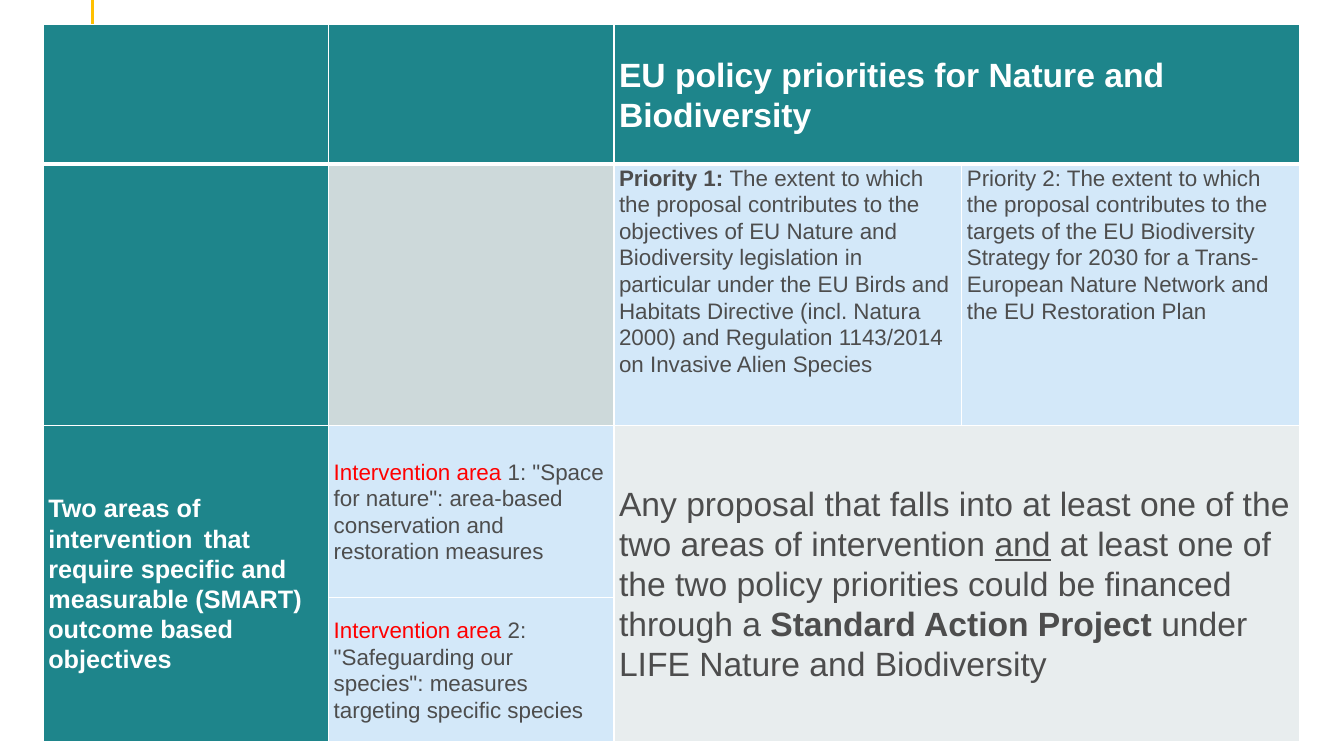
import pptx
import pptx.util
import pptx.dml.color
import pptx.enum.shapes
import pptx.enum.text
import pptx.oxml.ns
from lxml import etree
from pptx.util import Inches

TEAL, GREY, BLUE, PALE = "1E858B", "CDD9DA", "D3E8F9", "E8EDEE"
WHITE, TEXT, RED, GOLD = "FFFFFF", "4D4D4D", "FF0000", "FFC000"

COLUMN_WIDTHS = [2.83, 2.83, 3.45, 3.35]
ROW_HEIGHTS = [1.39, 2.59, 1.71, 1.43]
TABLE_LEFT, TABLE_TOP = 0.43, 0.24
ACCENT_X, ACCENT_BOTTOM = 0.92, 1.4
MERGES = [((0, 2), (0, 3)), ((2, 0), (3, 0)), ((2, 2), (3, 3))]

FILLS = [
    [TEAL, TEAL, TEAL, TEAL],
    [TEAL, GREY, BLUE, BLUE],
    [TEAL, BLUE, PALE, PALE],
    [TEAL, BLUE, PALE, PALE],
]

MIDDLE = pptx.enum.text.MSO_ANCHOR.MIDDLE
TOP = pptx.enum.text.MSO_ANCHOR.TOP

CONTENT = {
    (0, 2): (MIDDLE, [("EU policy priorities for Nature and Biodiversity", 24, WHITE, "b")]),
    (1, 2): (TOP, [
        ("Priority 1: ", 16, TEXT, "b"),
        ("The extent to which the proposal contributes to the objectives of EU Nature and "
         "Biodiversity legislation in particular under the EU Birds and Habitats Directive "
         "(incl. Natura 2000) and Regulation 1143/2014 on Invasive Alien Species", 16, TEXT, ""),
    ]),
    (1, 3): (TOP, [
        ("Priority 2: The extent to which the proposal contributes to the targets of the EU "
         "Biodiversity Strategy for 2030 for a Trans-European Nature Network and the EU "
         "Restoration Plan", 16, TEXT, ""),
    ]),
    (2, 0): (MIDDLE, [
        ("Two areas of intervention ", 18, WHITE, "b"),
        (" ", 11, WHITE, "b"),
        ("that require specific and measurable (SMART) outcome based objectives", 18, WHITE, "b"),
    ]),
    (2, 1): (MIDDLE, [
        ("Intervention area ", 16, RED, ""),
        ('1: "Space for nature": area-based conservation and restoration measures', 16, TEXT, ""),
    ]),
    (2, 2): (MIDDLE, [
        ("Any proposal that falls into at least one of the two areas of intervention ", 24, TEXT, ""),
        ("and", 24, TEXT, "u"),
        (" at least one of the two policy priorities could be financed through a ", 24, TEXT, ""),
        ("Standard Action Project ", 24, TEXT, "b"),
        ("under LIFE Nature and Biodiversity", 24, TEXT, ""),
    ]),
    (3, 1): (MIDDLE, [
        ("Intervention area ", 16, RED, ""),
        ('2: "Safeguarding our species": measures targeting specific species', 16, TEXT, ""),
    ]),
}


def colour(value):
    return pptx.dml.color.RGBColor.from_string(value)


def add_borders(cell, row):
    widths = {"lnL": 1, "lnR": 1, "lnT": 3 if row == 1 else 1, "lnB": 3 if row == 0 else 1}
    properties = cell._tc.get_or_add_tcPr()
    for side, points in widths.items():
        border = etree.SubElement(properties, pptx.oxml.ns.qn("a:" + side),
                                  w=str(pptx.util.Pt(points)))
        fill = etree.SubElement(border, pptx.oxml.ns.qn("a:solidFill"))
        etree.SubElement(fill, pptx.oxml.ns.qn("a:srgbClr"), val=WHITE)


def write_cell(cell, anchor, runs):
    cell.vertical_anchor = anchor
    paragraph = cell.text_frame.paragraphs[0]
    paragraph.line_spacing = 1.07
    paragraph.space_after = pptx.util.Pt(6)
    for words, size, ink, style in runs:
        run = paragraph.add_run()
        run.text = words
        run.font.name = "Arial"
        run.font.size = pptx.util.Pt(size)
        run.font.color.rgb = colour(ink)
        run.font.bold = style == "b"
        run.font.underline = style == "u"


def add_accent(slide):
    accent = slide.shapes.add_connector(
        pptx.enum.shapes.MSO_CONNECTOR.STRAIGHT,
        Inches(ACCENT_X), Inches(0), Inches(ACCENT_X), Inches(ACCENT_BOTTOM))
    accent.line.color.rgb = colour(GOLD)
    accent.line.width = pptx.util.Pt(2.25)
    etree.SubElement(accent._element.spPr, pptx.oxml.ns.qn("a:effectLst"))


def add_priorities(slide):
    priorities = slide.shapes.add_table(
        len(ROW_HEIGHTS), len(COLUMN_WIDTHS), Inches(TABLE_LEFT), Inches(TABLE_TOP),
        Inches(sum(COLUMN_WIDTHS)), Inches(sum(ROW_HEIGHTS))).table
    for column, width in zip(priorities.columns, COLUMN_WIDTHS):
        column.width = Inches(width)
    for row, height in zip(priorities.rows, ROW_HEIGHTS):
        row.height = Inches(height)
    for row, fills in enumerate(FILLS):
        for column, fill in enumerate(fills):
            cell = priorities.cell(row, column)
            cell.margin_left = cell.margin_right = Inches(0.05)
            cell.margin_top = cell.margin_bottom = 0
            add_borders(cell, row)
            cell.fill.solid()
            cell.fill.fore_color.rgb = colour(fill)
    for first, last in MERGES:
        priorities.cell(*first).merge(priorities.cell(*last))
    for position, (anchor, runs) in CONTENT.items():
        write_cell(priorities.cell(*position), anchor, runs)


def main():
    deck = pptx.Presentation()
    deck.slide_width, deck.slide_height = Inches(13.33), Inches(7.5)
    slide = deck.slides.add_slide(deck.slide_layouts[6])
    add_accent(slide)
    add_priorities(slide)
    deck.save("out.pptx")


if __name__ == "__main__":
    main()
